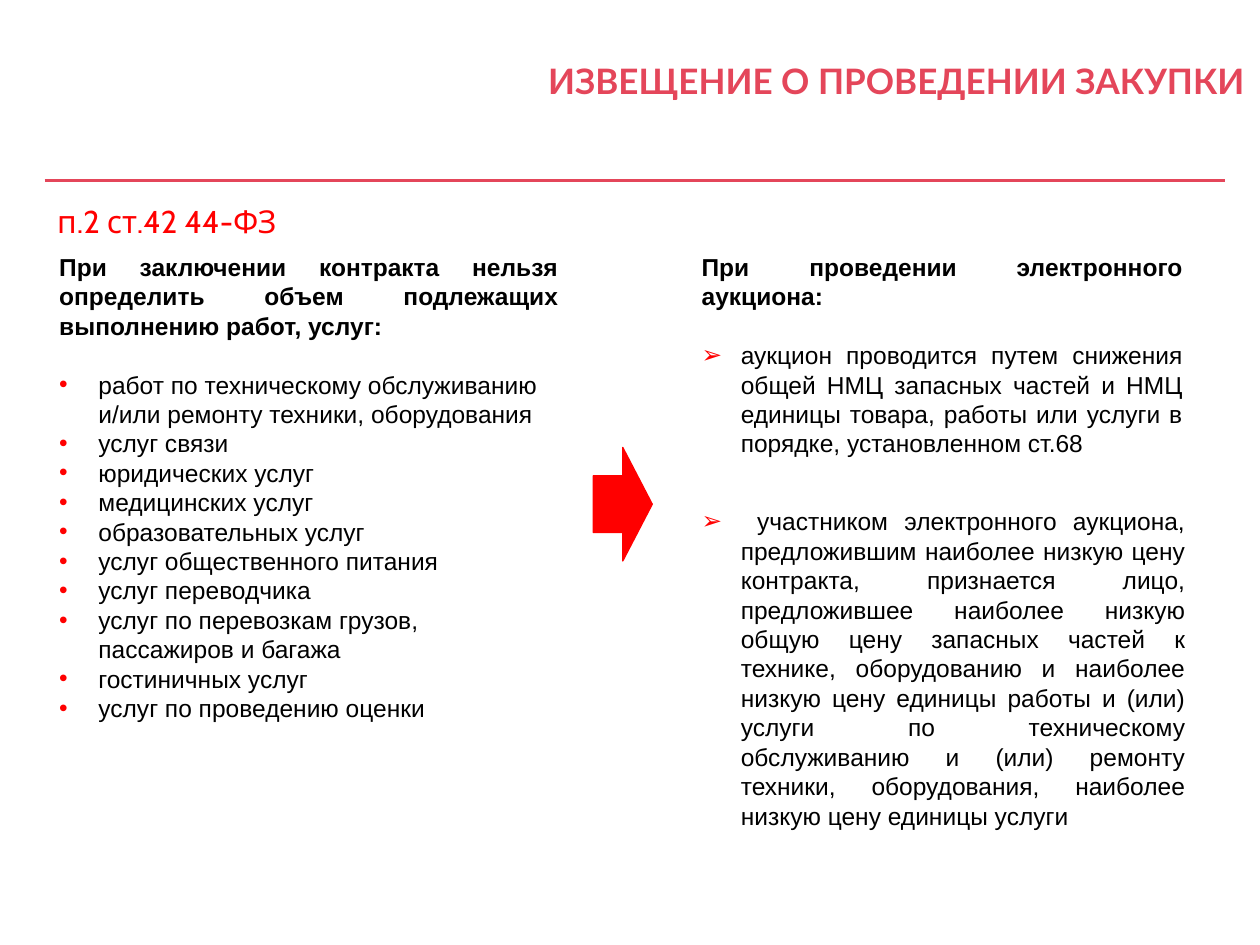
from dataclasses import dataclass

from lxml.etree import SubElement
from pptx import Presentation
from pptx.dml.color import RGBColor
from pptx.enum.shapes import MSO_CONNECTOR, MSO_SHAPE
from pptx.enum.text import MSO_ANCHOR, MSO_AUTO_SIZE, PP_ALIGN
from pptx.oxml.ns import qn
from pptx.util import Cm, Pt


@dataclass(frozen=True)
class Theme:
    accent: RGBColor = RGBColor(0xE4, 0x46, 0x5A)
    red: RGBColor = RGBColor(0xFF, 0, 0)
    black: RGBColor = RGBColor(0, 0, 0)
    white: RGBColor = RGBColor(0xFF, 0xFF, 0xFF)
    title_size: Pt = Pt(20)
    reference_size: Pt = Pt(18)
    body_size: Pt = Pt(14)
    list_gap: Pt = Pt(16.8)
    hanging: Cm = Cm(0.79)


THEME = Theme()

SERVICES = [
    "работ по техническому обслуживанию и/или ремонту техники, оборудования",
    "услуг связи",
    "юридических услуг",
    "медицинских услуг",
    "образовательных услуг",
    "услуг общественного питания",
    "услуг переводчика",
    "услуг по перевозкам грузов, пассажиров и багажа",
    "гостиничных услуг",
    "услуг по проведению оценки",
]
AUCTION_RULE = (
    "аукцион проводится путем снижения общей НМЦ запасных частей и НМЦ единицы "
    "товара, работы или услуги в порядке, установленном ст.68"
)
WINNER_RULE = (
    " участником электронного аукциона, предложившим наиболее низкую цену контракта, "
    "признается лицо, предложившее наиболее низкую общую цену запасных частей к технике, "
    "оборудованию и наиболее низкую цену единицы работы и (или) услуги по техническому "
    "обслуживанию и (или) ремонту техники, оборудования, наиболее низкую цену единицы услуги"
)


def place(placeholder, box):
    """Move a placeholder to box (left, top, width, height) and return its text frame."""
    placeholder.left, placeholder.top, placeholder.width, placeholder.height = box
    frame = placeholder.text_frame
    frame.word_wrap = True
    frame.auto_size = MSO_AUTO_SIZE.NONE
    frame.vertical_anchor = MSO_ANCHOR.TOP
    return frame


def style(paragraph, font_name, size, color, bold=False, align=PP_ALIGN.LEFT):
    paragraph.alignment = align
    paragraph.space_before = Pt(0)
    font = paragraph.font
    font.name, font.size, font.bold = font_name, size, bold
    font.color.rgb = color


def set_bullet(paragraph, char=None):
    """Give a red hanging bullet, or none when char is missing."""
    properties = paragraph._p.get_or_add_pPr()
    indent = THEME.hanging if char else 0
    properties.set("marL", str(indent))
    properties.set("indent", str(-indent))
    if char:
        color = SubElement(properties, qn("a:buClr"))
        SubElement(color, qn("a:srgbClr"), val=str(THEME.red))
        SubElement(properties, qn("a:buFont"), typeface="Arial")
        SubElement(properties, qn("a:buChar"), char=char)
    else:
        SubElement(properties, qn("a:buNone"))


def add_title(slide, box):
    title = slide.shapes.title
    title.fill.solid()
    title.fill.fore_color.rgb = THEME.white
    heading = place(title, box).paragraphs[0]
    heading.text = "ИЗВЕЩЕНИЕ О ПРОВЕДЕНИИ ЗАКУПКИ"
    style(heading, "Lato", THEME.title_size, THEME.accent, True, PP_ALIGN.RIGHT)
    heading.line_spacing = 1.2


def add_rule(slide, left, top, width):
    rule = slide.shapes.add_connector(
        MSO_CONNECTOR.STRAIGHT, left, top, left + width, top)
    rule.line.color.rgb = THEME.accent
    rule.line.width = Pt(1.5)
    SubElement(rule._element.spPr, qn("a:effectLst"))


def add_law_reference(placeholder, box):
    reference = place(placeholder, box).paragraphs[0]
    reference.text = "п.2 ст.42 44-ФЗ"
    set_bullet(reference)
    style(reference, "Cabin", THEME.reference_size, THEME.red)


def add_list(placeholder, box, items, bullet, align, heading=None):
    """Fill a column with an optional bold heading and bulleted items."""
    frame = place(placeholder, box)
    entries = [(item, bullet) for item in items]
    if heading:
        entries.insert(0, (heading, None))
    for number, (text, char) in enumerate(entries):
        paragraph = frame.add_paragraph() if number else frame.paragraphs[0]
        paragraph.text = text
        set_bullet(paragraph, char)
        style(paragraph, "Arial", THEME.body_size, THEME.black,
              bold=not char, align=align if char else PP_ALIGN.JUSTIFY)
        if heading and number == 1:
            paragraph.space_before = THEME.list_gap


def add_arrow(slide, box):
    arrow = slide.shapes.add_shape(MSO_SHAPE.RIGHT_ARROW, *box)
    arrow.shadow.inherit = False
    arrow.fill.solid()
    arrow.fill.fore_color.rgb = THEME.red
    arrow.line.color.rgb = THEME.red
    arrow.line.width = Pt(0.75)


def main():
    presentation = Presentation()
    presentation.slide_width, presentation.slide_height = Cm(25.4), Cm(19.05)
    comparison = presentation.slide_layouts.get_by_name("Comparison")
    slide = presentation.slides.add_slide(comparison)
    reference, services, auction, winner = list(slide.placeholders)[1:5]
    columns_top, right_column = Cm(4.95), Cm(13.89)

    add_title(slide, (Cm(7.16), Cm(0.91), Cm(18.19), Cm(2.51)))
    add_rule(slide, Cm(0.9), Cm(3.64), Cm(23.8))
    add_law_reference(reference, (Cm(0.9), Cm(3.94), Cm(5.08), Cm(1.02)))
    add_list(services, (Cm(0.94), columns_top, Cm(10.57), Cm(10.44)),
             SERVICES, "•", PP_ALIGN.LEFT,
             "При заключении контракта нельзя определить объем подлежащих "
             "выполнению работ, услуг:")
    add_list(auction, (right_column, columns_top, Cm(10.21), Cm(4.45)),
             [AUCTION_RULE], "➢", PP_ALIGN.JUSTIFY,
             "При проведении электронного аукциона:")
    add_list(winner, (right_column, Cm(10.08), Cm(10.26), Cm(6.83)),
             [WINNER_RULE], "➢", PP_ALIGN.JUSTIFY)
    add_arrow(slide, (Cm(11.96), Cm(9.02), Cm(1.19), Cm(2.29)))

    presentation.save("out.pptx")


if __name__ == "__main__":
    main()
